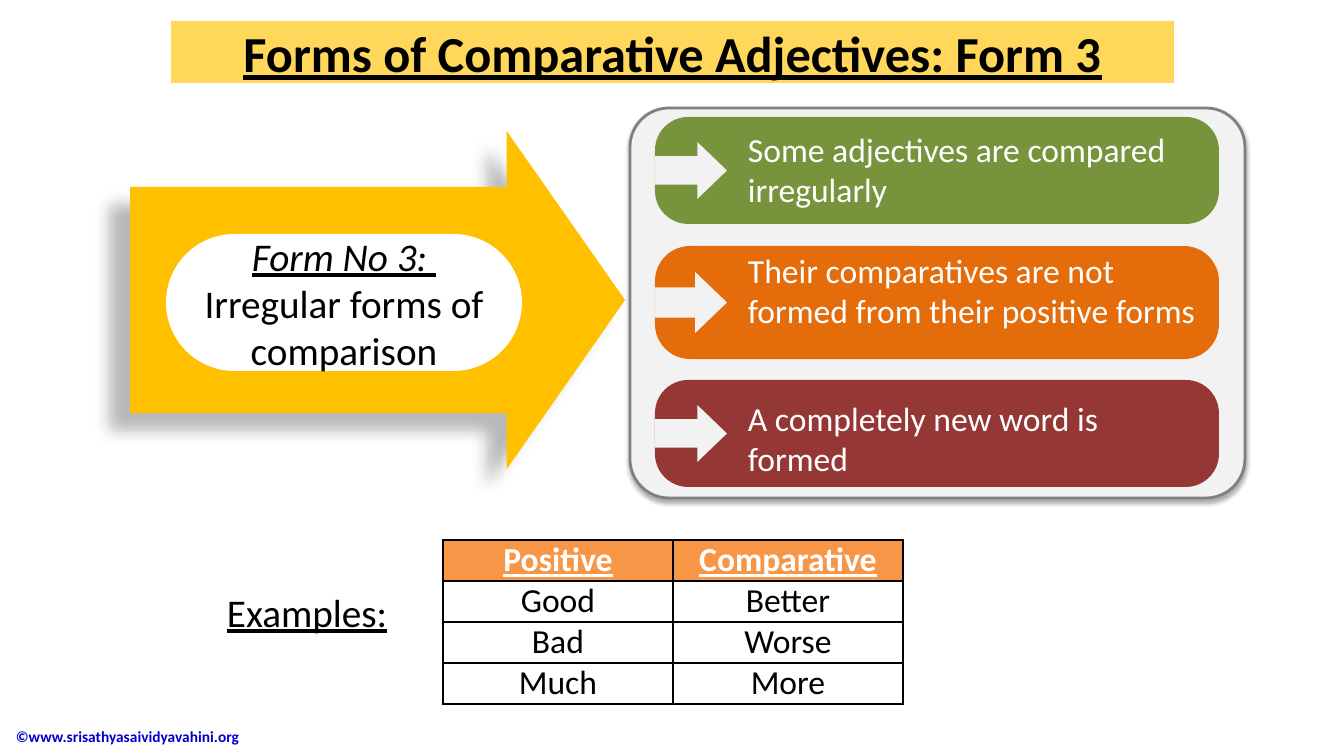
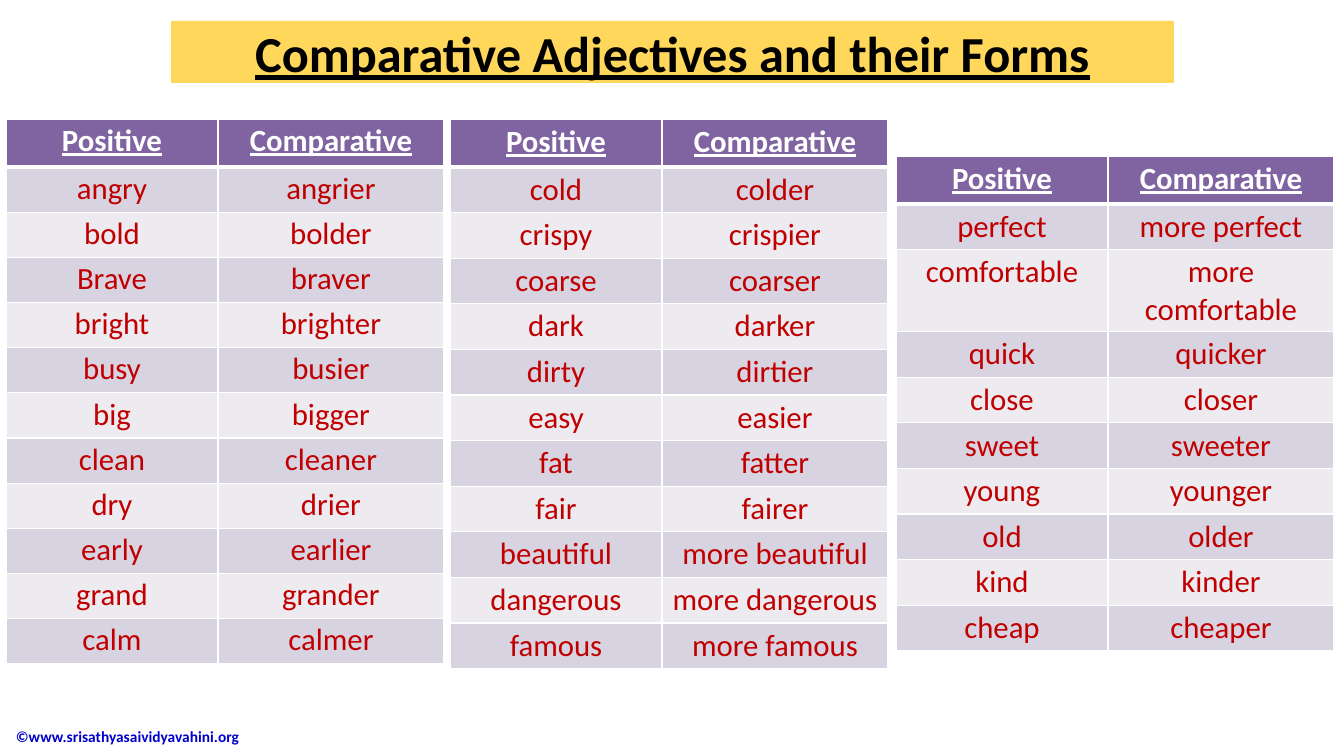
from lxml import etree
from pptx import Presentation
from pptx.dml.color import RGBColor
from pptx.enum import shapes, text
from pptx.oxml import ns
from pptx.util import Pt

PX = 9071  # EMU per px
FONT = "Calibri"
BLACK = RGBColor(0x00, 0x00, 0x00)
WHITE = RGBColor(0xFF, 0xFF, 0xFF)
TITLE_BAND = RGBColor(0xFF, 0xD8, 0x5B)
FOOTER_BLUE = RGBColor(0x00, 0x00, 0xCC)
GOLD = RGBColor(0xFF, 0xC0, 0x00)
PANEL = RGBColor(0xF2, 0xF2, 0xF2)
PANEL_LINE = RGBColor(0x80, 0x80, 0x80)
GREEN = RGBColor(0x77, 0x93, 0x3C)
ORANGE = RGBColor(0xE4, 0x6C, 0x0A)
MAROON = RGBColor(0x95, 0x37, 0x35)
HEADER_ORANGE = RGBColor(0xF7, 0x96, 0x46)
PURPLE = RGBColor(0x80, 0x64, 0xA2)
LIGHT_BAND = RGBColor(0xED, 0xEA, 0xF0)
DARK_BAND = RGBColor(0xD8, 0xD3, 0xE0)
RED = RGBColor(0xC0, 0x00, 0x00)

CENTER = text.PP_ALIGN.CENTER
LEFT = text.PP_ALIGN.LEFT
MIDDLE = text.MSO_ANCHOR.MIDDLE
TOP = text.MSO_ANCHOR.TOP
SHAPE = shapes.MSO_SHAPE
HEADINGS = ("Positive", "Comparative")


def add_box(slide, at, kind=None, fill=None, adjust=(), shadow=None, words="", size=24,
            color=BLACK, bold=False, underline=False, align=LEFT, anchor=TOP):
    """Add a preset shape, or a text box without kind; shadow is alpha %, blur, distance, angle."""
    place = [n * PX for n in at]
    if kind is None:
        box = slide.shapes.add_textbox(*place)
    else:
        box = slide.shapes.add_shape(kind, *place)
        box.shadow.inherit = False
        box.fill.solid()
        box.fill.fore_color.rgb = fill
        box.line.fill.background()
        for i, value in enumerate(adjust):
            box.adjustments[i] = value
    if shadow:
        alpha, blur, distance, angle = shadow
        effects = box._element.spPr.find(ns.qn("a:effectLst"))
        outer = etree.SubElement(effects, ns.qn("a:outerShdw"), blurRad=str(Pt(blur)),
                                 dist=str(Pt(distance)), dir=str(angle * 60000),
                                 algn="ctr", rotWithShape="0")
        tint = etree.SubElement(outer, ns.qn("a:srgbClr"), val=str(BLACK))
        etree.SubElement(tint, ns.qn("a:alpha"), val=str(alpha * 1000))
    if words:
        frame = box.text_frame
        frame.word_wrap = True
        frame.vertical_anchor = anchor
        line = frame.paragraphs[0]
        line.text = words
        line.alignment = align
        line.font.name, line.font.size = FONT, Pt(size)
        line.font.bold, line.font.underline = bold, underline
        line.font.color.rgb = color
    return box


def add_word_table(slide, left, top, widths, heights, pairs, size, header_fill, bands,
                   color, border, header_rule, pad):
    """Add a table of word pairs under the headings; bands are the even and odd row fills."""
    rows = [HEADINGS, *pairs]
    table = slide.shapes.add_table(len(rows), 2, left * PX, top * PX,
                                   sum(widths) * PX, round(sum(heights) * PX)).table
    for column, width in zip(table.columns, widths):
        column.width = width * PX
    for r, (row, height) in enumerate(zip(table.rows, heights)):
        row.height = round(height * PX)
        for cell, word in zip(row.cells, rows[r]):
            header = r == 0
            tc_pr = cell._tc.get_or_add_tcPr()
            for side in "LRTB":
                ruled = (r, side) in ((0, "B"), (1, "T"))
                edge = etree.SubElement(tc_pr, ns.qn("a:ln" + side),
                                        w=str(Pt(header_rule if ruled else 1)))
                paint = etree.SubElement(edge, ns.qn("a:solidFill"))
                etree.SubElement(paint, ns.qn("a:srgbClr"), val=str(border))
            cell.fill.solid()
            cell.fill.fore_color.rgb = header_fill if header else bands[r % 2]
            cell.margin_left = cell.margin_right = 9 * PX
            cell.margin_top = cell.margin_bottom = pad * PX
            line = cell.text_frame.paragraphs[0]
            line.text = word
            line.alignment = CENTER
            line.font.name, line.font.size = FONT, Pt(size)
            line.font.bold = line.font.underline = header
            line.font.color.rgb = WHITE if header else color


prs = Presentation()
prs.slide_width, prs.slide_height = 1344 * PX, 756 * PX

slides = []
for title in ("Forms of Comparative Adjectives: Form 3", "Comparative Adjectives and their Forms"):
    slide = prs.slides.add_slide(prs.slide_layouts[6])
    add_box(slide, (6, 716, 356, 41), words="©www.srisathyasaividyavahini.org", size=11,
            color=FOOTER_BLUE, bold=True, anchor=MIDDLE)
    add_box(slide, (171, 21, 1003, 62), SHAPE.RECTANGLE, TITLE_BAND, words=title, size=36,
            bold=True, underline=True, align=CENTER, anchor=MIDDLE)
    slides.append(slide)
form_slide, list_slide = slides

# Slide 1: the irregular form
add_box(form_slide, (130, 131, 495, 338), SHAPE.RIGHT_ARROW, GOLD, (0.67, 0.35),
        shadow=(28, 11.8, 19.7, 141))
form_name = add_box(form_slide, (166, 234, 356, 137), SHAPE.ROUNDED_RECTANGLE, WHITE, (0.5,),
                    words="Form No 3: ", size=28, align=CENTER, anchor=MIDDLE)
frame = form_name.text_frame
frame.margin_left = frame.margin_right = frame.margin_top = frame.margin_bottom = 0
name_line = frame.paragraphs[0]
name_line.runs[0].font.italic = name_line.runs[0].font.underline = True
name_line.add_line_break()
name_line.add_run().text = "Irregular forms of comparison"

panel = add_box(form_slide, (630, 108, 615, 390), SHAPE.ROUNDED_RECTANGLE, PANEL, (0.1,),
                shadow=(32, 3.5, 2.2, 90))
panel.line.color.rgb = PANEL_LINE
panel.line.width = Pt(2)

rules = [
    (117, 107, GREEN, 124, 482, "Some adjectives are compared irregularly"),
    (246, 113, ORANGE, 245, 484, "Their comparatives are not formed from their positive forms"),
    (380, 107, MAROON, 393, 452, "A completely new word is formed"),
]
for top, height, fill, text_top, text_width, words in rules:
    notch = height * 54 // 100
    add_box(form_slide, (655, top, 564, height), SHAPE.ROUNDED_RECTANGLE, fill, (0.31,))
    add_box(form_slide, (655, top + (height - notch) // 2, 72, notch), SHAPE.RIGHT_ARROW,
            PANEL, (0.5, 0.52))
    add_box(form_slide, (738, text_top, text_width, 84), words=words, color=WHITE)

add_box(form_slide, (212, 583, 190, 57), words="Examples:", size=28, underline=True, align=CENTER)
examples = [("Good", "Better"), ("Bad", "Worse"), ("Much", "More")]
add_word_table(form_slide, 443, 540, (230, 230), [41] * 4, examples, 24, HEADER_ORANGE,
               (WHITE, WHITE), BLACK, BLACK, 1, 0)

# Slide 2: three word lists
first_words = [
    ("angry", "angrier"), ("bold", "bolder"), ("Brave", "braver"), ("bright", "brighter"),
    ("busy", "busier"), ("big", "bigger"), ("clean", "cleaner"), ("dry", "drier"),
    ("early", "earlier"), ("grand", "grander"), ("calm", "calmer"),
]
second_words = [
    ("cold", "colder"), ("crispy", "crispier"), ("coarse", "coarser"), ("dark", "darker"),
    ("dirty", "dirtier"), ("easy", "easier"), ("fat", "fatter"), ("fair", "fairer"),
    ("beautiful", "more beautiful"), ("dangerous", "more dangerous"), ("famous", "more famous"),
]
third_words = [
    ("perfect", "more perfect"), ("comfortable", "more comfortable"), ("quick", "quicker"),
    ("close", "closer"), ("sweet", "sweeter"), ("young", "younger"), ("old", "older"),
    ("kind", "kinder"), ("cheap", "cheaper"),
]
word_lists = [(6, 119, 497, 3, first_words), (450, 119, 502, 4, second_words),
              (896, 156, 411, 4, third_words)]
for left, top, body_height, pad, pairs in word_lists:
    heights = [48] + [body_height / len(pairs)] * len(pairs)
    add_word_table(list_slide, left, top, (212, 226), heights, pairs, 22, PURPLE,
                   (LIGHT_BAND, DARK_BAND), RED, WHITE, 3, pad)

prs.save("out.pptx")
